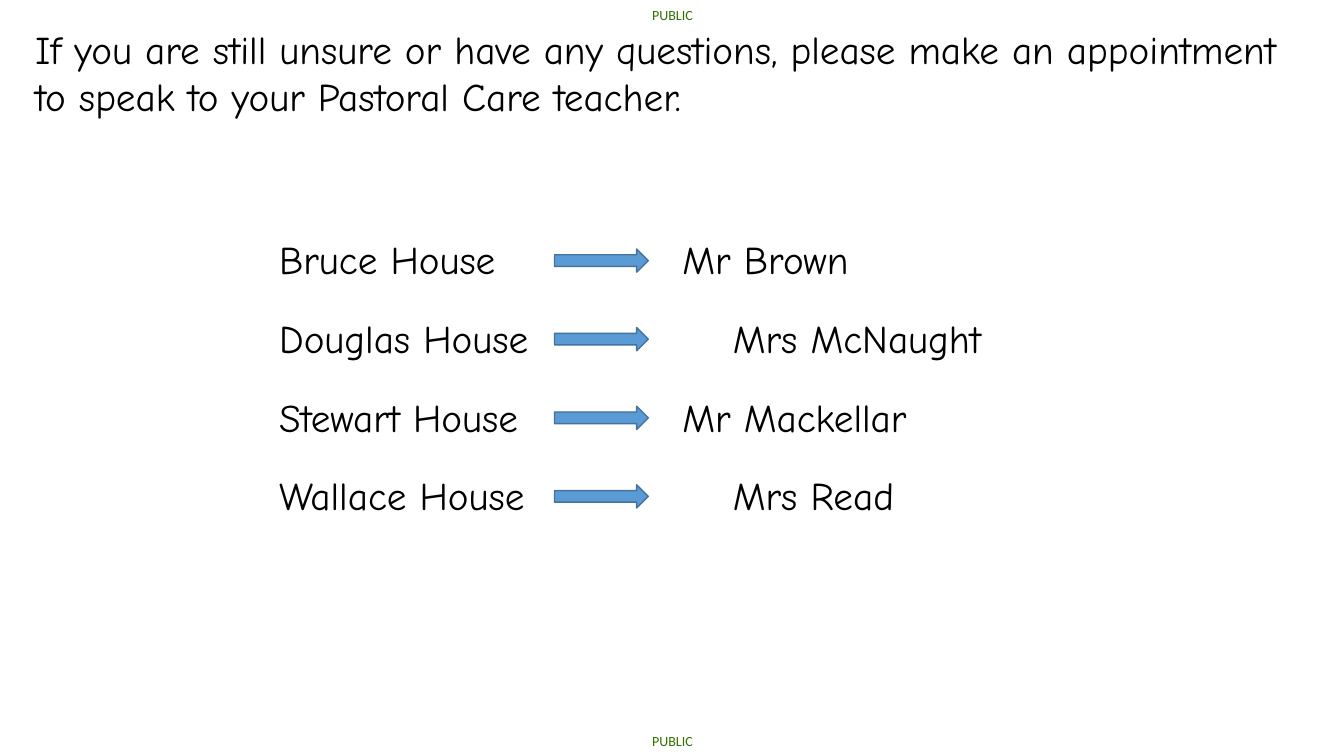
from lxml import etree
from pptx import Presentation, util as u
from pptx.dml.color import RGBColor
from pptx.enum import shapes, text
from pptx.oxml.ns import qn

SCALE = 9144  # EMU per px, 100 px to the inch
PITCH = 78    # distance between house rows
HOUSES = [  # house, teacher, tab stop of the teacher's name
    ("Bruce House", "Mr Brown", 400),
    ("Douglas House", "Mrs McNaught", 450),
    ("Stewart House", "Mr Mackellar", 400),
    ("Wallace House", "Mrs Read", 450),
]


def px(*vals):
    return [u.Emu(val * SCALE) for val in vals]


def color(code):
    return RGBColor.from_string(code)


def add_text(slide, box, words, size=28, name="Comic Neue", ink="000000"):
    frame = slide.shapes.add_textbox(*px(*box)).text_frame
    frame.word_wrap = True
    frame.text = words
    para = frame.paragraphs[0]
    para.font.size = u.Pt(size)
    para.font.name = name
    para.font.color.rgb = color(ink)
    return frame


def add_label(slide, top):
    frame = add_text(slide, (632, top, 70, 29), "PUBLIC", 10, "Calibri", "317100")
    frame.margin_left = frame.margin_right = 0
    frame.margin_top = frame.margin_bottom = 0
    frame.vertical_anchor = text.MSO_ANCHOR.MIDDLE
    frame.paragraphs[0].alignment = text.PP_ALIGN.CENTER


def set_tab(para, stop):
    props = para._p.get_or_add_pPr()
    tabs = etree.Element(qn("a:tabLst"))
    etree.SubElement(tabs, qn("a:tab"), pos=str(stop * SCALE), algn="l")
    props.insert(0, tabs)


def add_arrow(slide, box):
    arrow = slide.shapes.add_shape(shapes.MSO_SHAPE.RIGHT_ARROW, *px(*box))
    arrow.shadow.inherit = False
    arrow.fill.solid()
    arrow.fill.fore_color.rgb = color("5B9BD5")
    arrow.line.color.rgb = color("43739E")
    arrow.line.width = u.Pt(1)


def add_house(slide, row, house, teacher, stop):
    shift = row * PITCH
    frame = add_text(slide, (267, 229 + shift, 799, 57), f"{house}\t{teacher}")
    set_tab(frame.paragraphs[0], stop)
    add_arrow(slide, (550, 247 + shift, 93, 23))


def main():
    deck = Presentation()
    deck.slide_width, deck.slide_height = px(1333, 750)
    slide = deck.slides.add_slide(deck.slide_layouts[6])

    # Labels at the foot and the head
    for top in (721, 0):
        add_label(slide, top)

    # Message
    add_text(slide, (25, 20, 1282, 104),
             "If you are still unsure or have any questions, please make an "
             "appointment to speak to your Pastoral Care teacher.")

    # Houses and their teachers
    for row, entry in enumerate(HOUSES):
        add_house(slide, row, *entry)

    deck.save("out.pptx")


if __name__ == "__main__":
    main()
